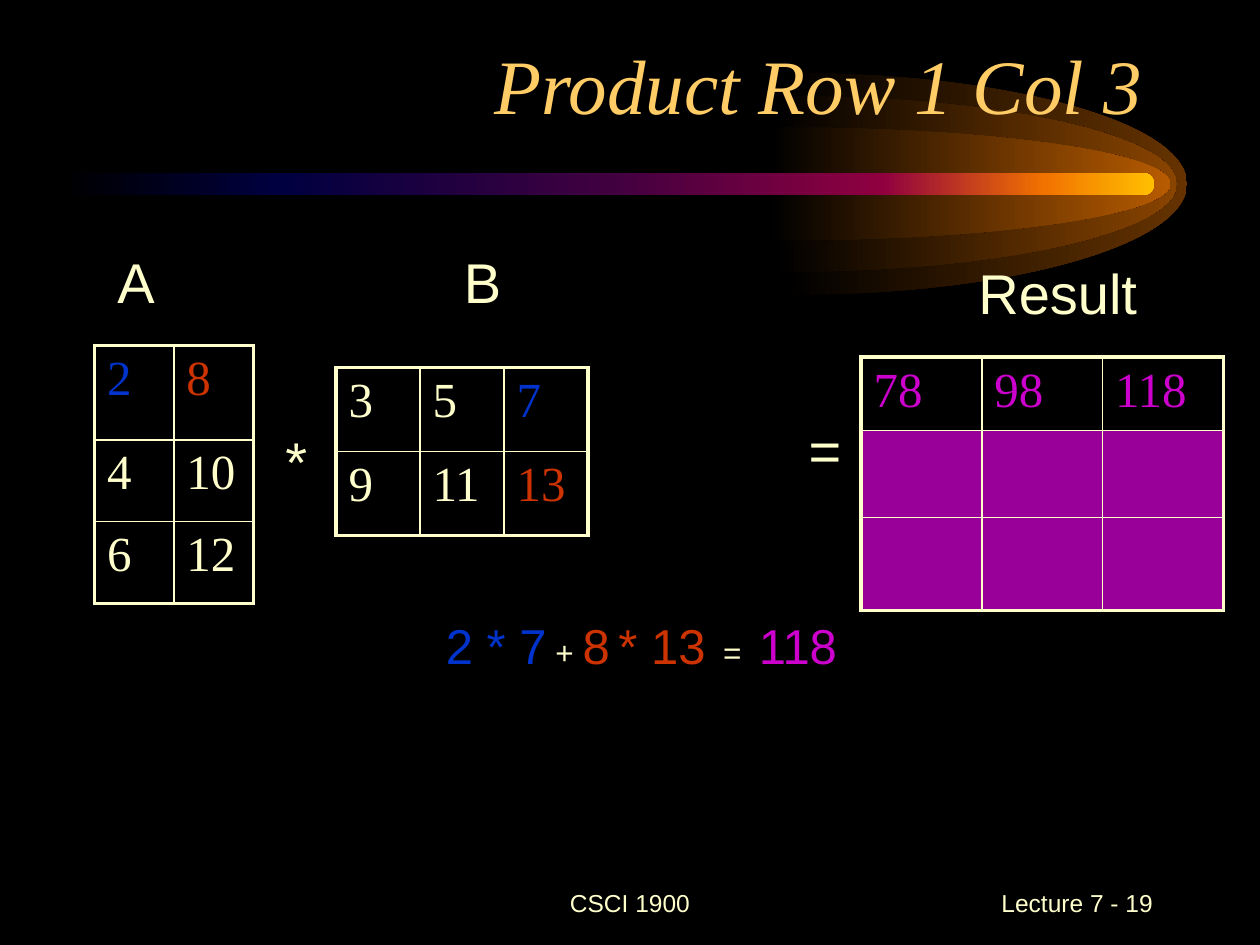
from lxml import etree
from pptx import Presentation
from pptx.dml.color import RGBColor
from pptx.enum.shapes import MSO_SHAPE as Shape
from pptx.enum.text import MSO_ANCHOR as Anchor, MSO_AUTO_SIZE as AutoSize, PP_ALIGN as Align
from pptx.oxml.ns import qn
from pptx.util import Inches, Pt

BLACK = RGBColor(0x00, 0x00, 0x00)
CREAM = RGBColor(0xFF, 0xFF, 0xCC)
GOLD = RGBColor(0xFF, 0xCC, 0x66)
BLUE = RGBColor(0x00, 0x33, 0xCC)
RED = RGBColor(0xCC, 0x33, 0x00)
MAGENTA = RGBColor(0xCC, 0x00, 0xCC)
PURPLE = RGBColor(0x99, 0x00, 0x99)
BROWN = RGBColor(0x66, 0x33, 0x00)
RUST = RGBColor(0x89, 0x44, 0x00)
COPPER = RGBColor(0xB7, 0x5B, 0x00)
NAVY = RGBColor(0x00, 0x00, 0x40)
PLUM = RGBColor(0x40, 0x00, 0x40)
CRIMSON = RGBColor(0x8F, 0x00, 0x40)
ORANGE = RGBColor(0xF2, 0x73, 0x00)
AMBER = RGBColor(0xFF, 0xBF, 0x00)


def paint_gradient(shape, stops):
    """Fill a shape from left to right with (percent, colour) stops."""
    shape.shadow.inherit = False
    shape.line.fill.background()
    shape.fill.gradient()
    shape.fill.gradient_angle = 0
    stop_list = shape._element.spPr.find(qn("a:gradFill")).find(qn("a:gsLst"))
    for stop in list(stop_list):
        stop_list.remove(stop)
    for percent, color in stops:
        stop = etree.SubElement(stop_list, qn("a:gs"), pos=str(percent * 1000))
        etree.SubElement(stop, qn("a:srgbClr"), val=str(color))


def add_text(place, spans, font="Arial", align=Align.LEFT, anchor=Anchor.TOP, wrap=True, grow=False):
    """Add a one-line text box from (text, size, colour) spans."""
    box = slide.shapes.add_textbox(*[Inches(n) for n in place])
    frame = box.text_frame
    frame.word_wrap = wrap
    frame.vertical_anchor = anchor
    frame.auto_size = AutoSize.SHAPE_TO_FIT_TEXT if grow else AutoSize.NONE
    para = frame.paragraphs[0]
    para.alignment = align
    para.font.name = font
    for text, size, color in spans:
        span = para.add_run()
        span.text = text
        span.font.size = Pt(size)
        span.font.color.rgb = color
    return para


deck = Presentation()
deck.slide_width, deck.slide_height = Inches(10), Inches(7.5)
slide = deck.slides.add_slide(deck.slide_layouts[6])
slide.background.fill.solid()
slide.background.fill.fore_color.rgb = BLACK

# Comet glow: half ellipses around the bar's axis, each of two quarter curves
AXIS, REACH, ROUND = 1.46, 3.13, 0.55
for left, half, color in [(6.29, 0.88, BROWN), (6.21, 0.7, RUST), (6.16, 0.45, COPPER)]:
    right, pull = left + REACH, left + REACH * ROUND
    outline = [(left, -half), (pull, -half), (right, -half * ROUND), (right, 0),
               (right, half * ROUND), (pull, half), (left, half), (left - 0.05, half), (left, 0)]
    points = [(Inches(x), Inches(AXIS + y)) for x, y in outline]
    builder = slide.shapes.build_freeform(*points[0])
    builder.add_line_segments(points[1:], close=True)
    glow = builder.convert_to_shape()
    segments = list(glow._element.spPr.iter(qn("a:lnTo")))
    for first in (0, 3):
        curve = etree.Element(qn("a:cubicBezTo"))
        segments[first].addprevious(curve)
        for segment in segments[first:first + 3]:
            curve.append(segment[0])
            segment.getparent().remove(segment)
    paint_gradient(glow, [(0, BLACK), (100, color)])

# Comet bar
bar = slide.shapes.add_shape(Shape.ROUNDED_RECTANGLE, Inches(0.5), Inches(1.37), Inches(8.66), Inches(0.18))
bar.adjustments[0] = 0.5
paint_gradient(bar, [(0, BLACK), (20, NAVY), (50, PLUM), (75, CRIMSON), (90, ORANGE), (100, AMBER)])

# Footer and title
add_text((41 / 12, 83 / 12, 19 / 6, 0.5), [("CSCI 1900", 14, CREAM)], align=Align.CENTER, anchor=Anchor.MIDDLE)
add_text((43 / 6, 83 / 12, 25 / 12, 0.5), [(" Lecture 7 - 19", 14, CREAM)], align=Align.RIGHT, anchor=Anchor.MIDDLE)
title = add_text((2 / 3, 0.25, 8.5, 5 / 6), [("Product Row 1 Col 3", 44, GOLD)],
                 "Times New Roman", Align.RIGHT, Anchor.BOTTOM)
title.font.italic = True

# Matrices: left, top, column width, row heights, values, highlighted values
matrices = [
    (0.75, 2.74, 0.63, [0.75, 0.65, 0.65],
     [["2", "8"], ["4", "10"], ["6", "12"]], {"2": BLUE, "8": RED}),
    (8 / 3, 35 / 12, 2 / 3, [2 / 3, 2 / 3],
     [["3", "5", "7"], ["9", "11", "13"]], {"7": BLUE, "13": RED}),
    (41 / 6, 17 / 6, 23 / 24, [7 / 12, 0.69, 0.74],
     [["78", "98", "118"], [""] * 3, [""] * 3], dict.fromkeys(["78", "98", "118"], MAGENTA)),
]
for left, top, column_width, row_heights, values, highlights in matrices:
    row_count, column_count = len(values), len(values[0])
    table = slide.shapes.add_table(row_count, column_count, Inches(left), Inches(top),
                                   Inches(column_width * column_count), Inches(sum(row_heights))).table
    table.first_row = table.horz_banding = False
    for column in table.columns:
        column.width = Inches(column_width)
    for r, height in enumerate(row_heights):
        table.rows[r].height = Inches(height)
        for c, value in enumerate(values[r]):
            cell = table.cell(r, c)
            # Thick outer edges, thin inner ones
            edges = {"L": c == 0, "R": c == column_count - 1, "T": r == 0, "B": r == row_count - 1}
            for side, outer in edges.items():
                line = etree.SubElement(cell._tc.get_or_add_tcPr(), qn(f"a:ln{side}"),
                                        w=str(Pt(2.25 if outer else 1)))
                line_fill = etree.SubElement(line, qn("a:solidFill"))
                etree.SubElement(line_fill, qn("a:srgbClr"), val=str(CREAM))
            # Black behind the factors and the new result, purple where still unknown
            if not value or value in highlights and value not in ("78", "98"):
                cell.fill.solid()
                cell.fill.fore_color.rgb = BLACK if value else PURPLE
            else:
                cell.fill.background()
            if value:
                cell.text = value
                font = cell.text_frame.paragraphs[0].font
                font.name, font.size = "Times New Roman", Pt(28)
                font.color.rgb = highlights.get(value, CREAM)

# Operators and matrix names
for text, left, top, width in [("*", 13 / 6, 10 / 3, 0.38), ("=", 6.32, 3.25, 0.77), ("A", 5 / 6, 23 / 12, 0.5),
                               ("B", 43 / 12, 23 / 12, 0.5), ("Result", 23 / 3, 2, 1.46)]:
    add_text((left, top, width, 0.63), [(text, 32, CREAM)], wrap=text == "=", grow=True)

# Worked product
add_text((10 / 3, 29 / 6, 47 / 12, 0.57), [
    (" 2 * 7", 28, BLUE), (" + ", 18, CREAM), ("8", 28, RED), (" ", 18, CREAM),
    ("* 13", 28, RED), ("  =  ", 18, CREAM), ("118", 28, MAGENTA)], grow=True)

deck.save("out.pptx")
